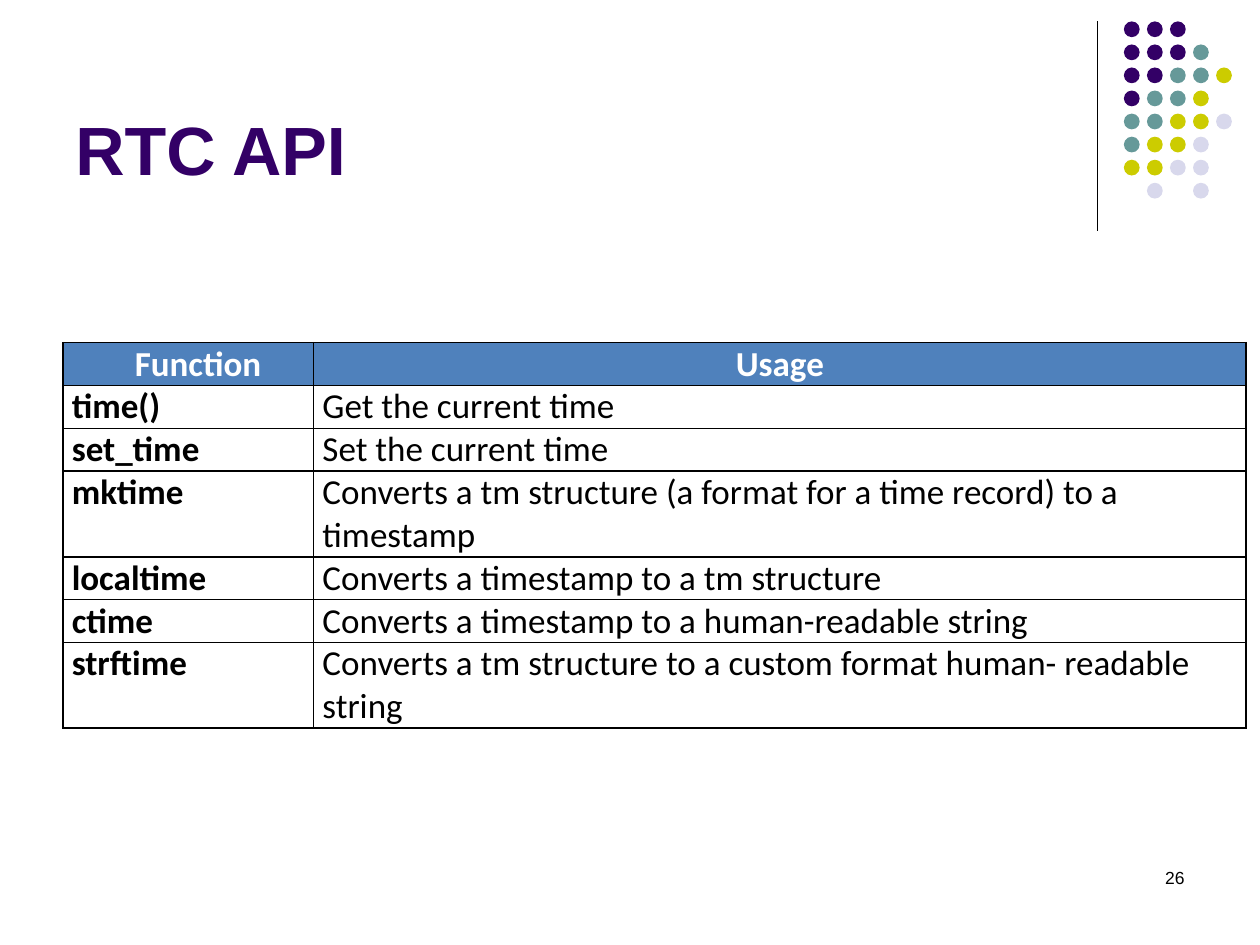
import pptx
import pptx.dml.color
import pptx.enum.shapes
import pptx.enum.text
import pptx.oxml.ns
import pptx.util
from lxml import etree

Inches, Pt = pptx.util.Inches, pptx.util.Pt
ALIGN = pptx.enum.text.PP_ALIGN
ANCHOR = pptx.enum.text.MSO_ANCHOR

TITLE = "RTC API"
PAGE_NUMBER = "26"
HEADER = ("Function", "Usage")
FUNCTIONS = [
    ("time()", "Get the current time"),
    ("set_time", "Set the current time"),
    ("mktime", "Converts a tm structure (a format for a time record) to a timestamp"),
    ("localtime", "Converts a timestamp to a tm structure"),
    ("ctime", "Converts a timestamp to a human-readable string"),
    ("strftime", "Converts a tm structure to a custom format human- readable string"),
]
# One letter per dot: purple, teal, yellow, lavender; "." leaves a gap.
DOTS = ["PPP..", "PPPT.", "PPTTY", "PTTY.", "TTYYL", "TYYL.", "YYLL.", ".L.L."]

THEME = {
    "heading_font": "Arial", "table_font": "Calibri",
    "title_size": 39, "table_size": 20, "number_size": 10,
    "title": "330066", "text": "000000", "header_text": "FFFFFF",
    "header_fill": "4F81BC", "border": "000000", "border_width": 1,
    "dots": {"P": "330066", "T": "669999", "Y": "CCCC00", "L": "D8D8EC"},
}

WIDTH, HEIGHT = 10, 7.5
MARGIN = WIDTH * 0.05
DOT_LEFT, DOT_TOP, DOT_PITCH, DOT_SIZE = 8.92, 0.17, 0.183, 0.125
RULE_X, RULE_BOTTOM = 8.71, 1.83
TABLE_TOP, COLUMNS, LINE_HEIGHT = 2.72, (1.99, 7.4), 0.34
WRAP_LENGTH = 60  # characters that fit on one line of the usage column
INDENT, HEADER_INDENT = 0.07, 0.57


def rgb(code):
    return pptx.dml.color.RGBColor.from_string(code)


def add_span(para, text, font, size, color, bold=False):
    span = para.add_run()
    span.text = text
    span.font.name, span.font.size, span.font.bold = font, Pt(size), bold
    span.font.color.rgb = rgb(color)


def add_text(page, bounds, text, size, color, bold=False,
             align=ALIGN.LEFT, anchor=ANCHOR.TOP):
    frame = page.shapes.add_textbox(*map(Inches, bounds)).text_frame
    frame.word_wrap = True
    frame.vertical_anchor = anchor
    para = frame.paragraphs[0]
    para.alignment = align
    add_span(para, text, THEME["heading_font"], size, color, bold)


def add_rule(page):
    rule = page.shapes.add_connector(
        pptx.enum.shapes.MSO_CONNECTOR.STRAIGHT,
        *map(Inches, (RULE_X, DOT_TOP, RULE_X, RULE_BOTTOM)))
    rule.line.color.rgb = rgb(THEME["border"])
    rule.line.width = Pt(0.75)
    properties = rule._element.spPr
    etree.SubElement(properties, pptx.oxml.ns.qn("a:effectLst"))


def add_dots(page):
    for row, letters in enumerate(DOTS):
        for column, letter in enumerate(letters):
            if letter == ".":
                continue
            dot = page.shapes.add_shape(
                pptx.enum.shapes.MSO_SHAPE.OVAL,
                Inches(DOT_LEFT + column * DOT_PITCH),
                Inches(DOT_TOP + row * DOT_PITCH),
                Inches(DOT_SIZE), Inches(DOT_SIZE))
            dot.shadow.inherit = False
            dot.fill.solid()
            dot.fill.fore_color.rgb = rgb(THEME["dots"][letter])
            dot.line.fill.background()


def add_borders(cell):
    qn = pptx.oxml.ns.qn
    properties = cell._tc.get_or_add_tcPr()
    for side in ("a:lnL", "a:lnR", "a:lnT", "a:lnB"):
        line = etree.SubElement(properties, qn(side), w=str(Pt(THEME["border_width"])))
        fill = etree.SubElement(line, qn("a:solidFill"))
        etree.SubElement(fill, qn("a:srgbClr"), val=THEME["border"])


def fill_cell(cell, text, is_header, column):
    add_borders(cell)
    cell.margin_left = cell.margin_right = cell.margin_top = cell.margin_bottom = 0
    para = cell.text_frame.paragraphs[0]
    if is_header:
        cell.fill.solid()
        cell.fill.fore_color.rgb = rgb(THEME["header_fill"])
    else:
        cell.fill.background()
    if is_header and column == 1:
        para.alignment = ALIGN.CENTER
    else:
        cell.margin_left = Inches(HEADER_INDENT if is_header else INDENT)
    add_span(para, text, THEME["table_font"], THEME["table_size"],
             THEME["header_text" if is_header else "text"],
             bold=is_header or column == 0)


def add_function_table(page):
    rows = [HEADER] + FUNCTIONS
    heights = [LINE_HEIGHT * (2 if len(usage) > WRAP_LENGTH else 1) for _, usage in rows]
    table = page.shapes.add_table(
        len(rows), len(COLUMNS), Inches(MARGIN), Inches(TABLE_TOP),
        Inches(sum(COLUMNS)), Inches(sum(heights))).table
    table.first_row = table.horz_banding = False
    for column, width in enumerate(COLUMNS):
        table.columns[column].width = Inches(width)
    for row, texts in enumerate(rows):
        table.rows[row].height = Inches(heights[row])
        for column, text in enumerate(texts):
            fill_cell(table.cell(row, column), text, row == 0, column)


def main():
    deck = pptx.Presentation()
    deck.slide_width, deck.slide_height = Inches(WIDTH), Inches(HEIGHT)
    page = deck.slides.add_slide(deck.slide_layouts[6])
    add_rule(page)
    add_dots(page)
    add_text(page, (MARGIN, 0.13, 8.25, 1.42), TITLE, THEME["title_size"],
             THEME["title"], bold=True, anchor=ANCHOR.BOTTOM)
    add_text(page, (7.17, 6.83, 2.33, 0.5), PAGE_NUMBER, THEME["number_size"],
             THEME["text"], align=ALIGN.RIGHT)
    add_function_table(page)
    deck.save("out.pptx")


if __name__ == "__main__":
    main()
